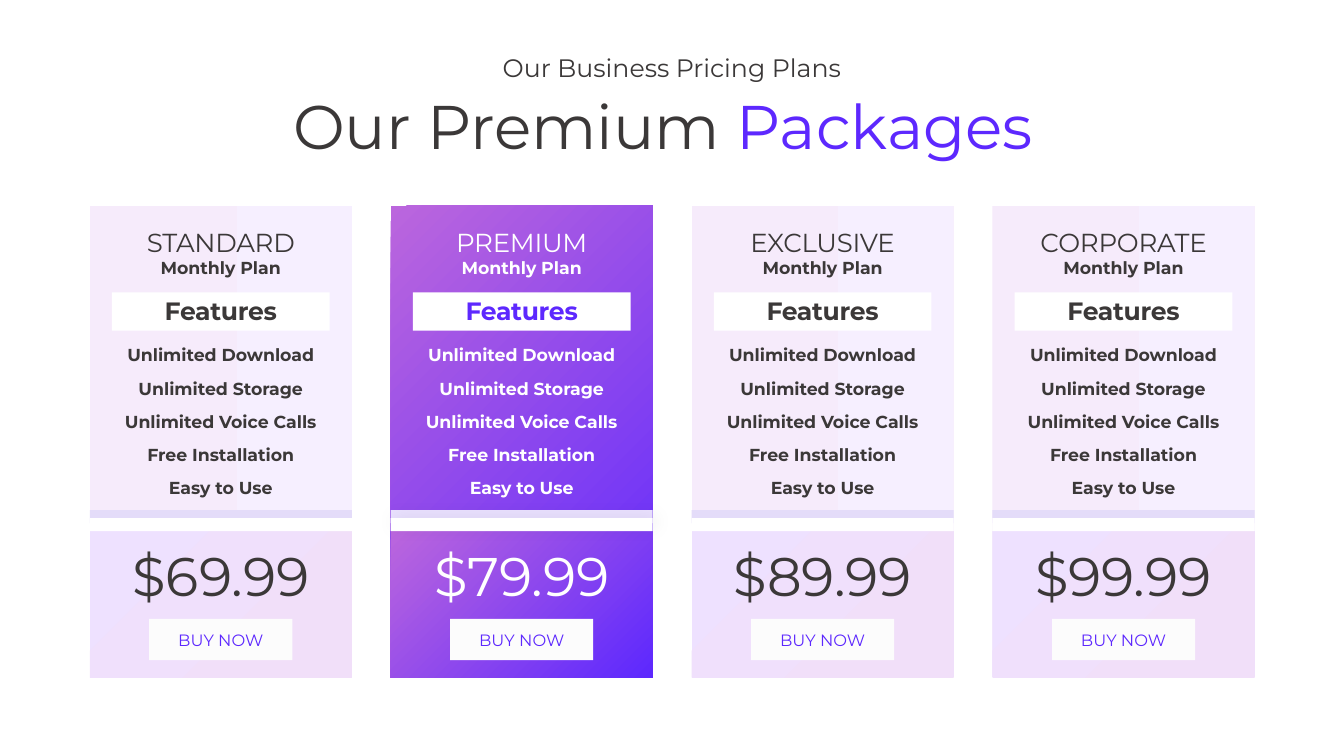
"""Build a pricing slide with four plan cards laid out on a percentage grid."""
from dataclasses import dataclass

from lxml.etree import SubElement
from pptx import Presentation
from pptx.dml.color import RGBColor
from pptx.enum.shapes import MSO_SHAPE
from pptx.enum.text import MSO_ANCHOR, MSO_AUTO_SIZE, PP_ALIGN
from pptx.oxml.ns import qn
from pptx.shapes.autoshape import Shape
from pptx.shapes.shapetree import GroupShapes, SlideShapes
from pptx.text.text import TextFrame
from pptx.util import Inches, Pt

SLIDE_WIDTH, SLIDE_HEIGHT = Inches(13.33), Inches(7.5)
FIRST_CENTRE, COLUMN_PITCH = 16.43, 22.39
FIRST_BENEFIT, BENEFIT_PITCH = 44.93, 4.37


@dataclass(frozen=True)
class Theme:
    """Colours and type sizes of the slide."""
    font: str = "Montserrat"
    ink: str = "3B3838"
    accent: str = "5D28FE"
    white: str = "FFFFFF"
    button: str = "FCFCFC"
    title_size: float = 44
    subtitle_size: float = 18
    plan_size: float = 18.6
    heading_size: float = 17.9
    body_size: float = 12.4
    price_size: float = 38.8
    button_size: float = 11.7


@dataclass(frozen=True)
class Gradient:
    """Two-stop gradient, horizontal or radiating from the lower right corner."""
    start: str
    end: str
    start_position: float = 0
    radial: bool = True


@dataclass(frozen=True)
class Band:
    """Centred block; top, height and width are percentages of the slide."""
    top: float
    height: float
    width: float


@dataclass(frozen=True)
class Style:
    """Type style of one label."""
    size: float
    color: str
    bold: bool = False
    spacing: int = 0


@dataclass(frozen=True)
class Palette:
    """Colours that distinguish a highlighted card from a plain one."""
    card: Gradient
    footer: Gradient
    divider: str
    text: str
    heading: str
    gap_shadow: bool = False


@dataclass(frozen=True)
class Plan:
    """Content of one card."""
    name: str
    name_width: float
    price: str
    palette: Palette


@dataclass(frozen=True)
class Benefit:
    """One feature line with its width as a percentage of the slide."""
    wording: str
    width: float


THEME = Theme()
VIVID = Gradient(THEME.accent, "BB66DD")
PLAIN = Palette(Gradient("F6EBFB", "F6EFFF", 0.12, radial=False),
                Gradient("F1DFF9", "EEE1FF", 0.12), "E4DCF9", THEME.ink, THEME.ink)
HIGHLIGHT = Palette(VIVID, VIVID, "EAE1FF", THEME.white, THEME.accent, gap_shadow=True)

PLANS = [
    Plan("STANDARD", 13.2, "$69.99", PLAIN),
    Plan("PREMIUM", 11.55, "$79.99", HIGHLIGHT),
    Plan("EXCLUSIVE", 13.05, "$89.99", PLAIN),
    Plan("CORPORATE", 14.55, "$99.99", PLAIN),
]
BENEFITS = [
    Benefit("Unlimited Download", 15.68),
    Benefit("Unlimited Storage", 14.03),
    Benefit("Unlimited Voice Calls", 16.13),
    Benefit("Free Installation", 12.68),
    Benefit("Easy to Use", 9.38),
]


def place(band: Band, centre: float) -> tuple[int, int, int, int]:
    """Turn a band around a centre into left, top, width and height."""
    return (int(SLIDE_WIDTH * (centre - band.width / 2) / 100),
            int(SLIDE_HEIGHT * band.top / 100),
            int(SLIDE_WIDTH * band.width / 100),
            int(SLIDE_HEIGHT * band.height / 100))


def apply_gradient(panel: Shape, gradient: Gradient) -> None:
    """Fill a panel with a two-stop gradient."""
    panel.fill.gradient()
    panel.fill.gradient_angle = 0
    first, last = panel.fill.gradient_stops
    first.color.rgb = RGBColor.from_string(gradient.start)
    first.position = gradient.start_position
    last.color.rgb = RGBColor.from_string(gradient.end)
    last.position = 1
    if gradient.radial:
        definition = panel._element.spPr.find(qn("a:gradFill"))
        definition.remove(definition.find(qn("a:lin")))
        circle = SubElement(definition, qn("a:path"), {"path": "circle"})
        SubElement(circle, qn("a:fillToRect"), {"l": "100000", "t": "100000"})


def add_panel(shapes: GroupShapes, band: Band, centre: float, fill: str | Gradient) -> Shape:
    """Draw a borderless rectangle."""
    panel = shapes.add_shape(MSO_SHAPE.RECTANGLE, *place(band, centre))
    panel.shadow.inherit = False
    panel.line.fill.background()
    if isinstance(fill, Gradient):
        apply_gradient(panel, fill)
    else:
        panel.fill.solid()
        panel.fill.fore_color.rgb = RGBColor.from_string(fill)
    return panel


def add_soft_shadow(panel: Shape) -> None:
    """Give a panel a faint shadow towards the upper right."""
    effects = panel._element.spPr.find(qn("a:effectLst"))
    shadow = SubElement(effects, qn("a:outerShdw"), {
        "blurRad": str(Pt(12)), "dist": str(Pt(3)), "dir": str(315 * 60000)})
    color = SubElement(shadow, qn("a:srgbClr"), {"val": "000000"})
    SubElement(color, qn("a:alpha"), {"val": "6000"})


def format_text(frame: TextFrame, style: Style) -> None:
    """Centre the text and apply a type style to its runs."""
    paragraph = frame.paragraphs[0]
    paragraph.alignment = PP_ALIGN.CENTER
    for run in paragraph.runs:
        run.font.name = THEME.font
        run.font.size = Pt(style.size)
        run.font.bold = style.bold
        run.font.color.rgb = RGBColor.from_string(style.color)
        if style.spacing:
            run._r.get_or_add_rPr().set("spc", str(style.spacing))


def add_label(shapes: SlideShapes | GroupShapes, wording: str, band: Band,
              centre: float, style: Style) -> None:
    """Write one centred line of text."""
    label = shapes.add_textbox(*place(band, centre))
    label.text_frame.word_wrap = False
    label.text_frame.auto_size = MSO_AUTO_SIZE.SHAPE_TO_FIT_TEXT
    label.text_frame.text = wording
    format_text(label.text_frame, style)


def add_header(shapes: SlideShapes) -> None:
    """Set the two-coloured title and the line above it."""
    title = shapes.title
    title.left, title.top, title.width, title.height = place(Band(10.93, 11.2, 61.05), 49.95)
    frame = title.text_frame
    frame.vertical_anchor = MSO_ANCHOR.TOP
    frame.auto_size = MSO_AUTO_SIZE.NONE
    frame.text = "Our Premium "
    highlight = frame.paragraphs[0].add_run()
    highlight.text = "Packages "
    format_text(frame, Style(THEME.title_size, THEME.ink))
    highlight.font.color.rgb = RGBColor.from_string(THEME.accent)
    add_label(shapes, "Our Business Pricing Plans", Band(6.27, 5.33, 28.2), 50,
              Style(THEME.subtitle_size, THEME.ink))


def add_card(shapes: GroupShapes, plan: Plan, centre: float) -> None:
    """Draw one plan with its features, price and button."""
    palette = plan.palette
    body = Style(THEME.body_size, palette.text, bold=True)
    add_panel(shapes, Band(27.2, 62.4, 19.5), centre, palette.card)
    add_panel(shapes, Band(70.27, 19.33, 19.5), centre, palette.footer)
    add_panel(shapes, Band(67.47, 1.73, 19.5), centre, palette.divider)
    gap = add_panel(shapes, Band(68.53, 1.73, 19.5), centre, THEME.white)
    if palette.gap_shadow:
        add_soft_shadow(gap)
    add_label(shapes, plan.name, Band(29.33, 5.47, plan.name_width), centre,
              Style(THEME.plan_size, palette.text, spacing=-20))
    add_label(shapes, "Monthly Plan", Band(33.33, 4.13, 10.58), centre, body)
    add_panel(shapes, Band(38.67, 5.07, 16.2), centre, THEME.white)
    add_label(shapes, "Features", Band(38.4, 5.33, 9.98), centre,
              Style(THEME.heading_size, palette.heading, bold=True, spacing=-20))
    for row, benefit in enumerate(BENEFITS):
        top = FIRST_BENEFIT + row * BENEFIT_PITCH
        add_label(shapes, benefit.wording, Band(top, 4.13, benefit.width), centre, body)
    add_label(shapes, plan.price, Band(71.07, 10, 15.98), centre,
              Style(THEME.price_size, palette.text))
    add_panel(shapes, Band(81.87, 5.47, 10.65), centre, THEME.button)
    add_label(shapes, "BUY NOW", Band(82.67, 4, 8.1), centre,
              Style(THEME.button_size, THEME.accent))


def main() -> None:
    """Create and save the presentation."""
    deck = Presentation()
    deck.slide_width, deck.slide_height = SLIDE_WIDTH, SLIDE_HEIGHT
    slide = deck.slides.add_slide(deck.slide_layouts.get_by_name("Title Only"))
    add_header(slide.shapes)
    for column, plan in enumerate(PLANS):
        card = slide.shapes.add_group_shape()
        add_card(card.shapes, plan, FIRST_CENTRE + column * COLUMN_PITCH)
    deck.save("out.pptx")


if __name__ == "__main__":
    main()
